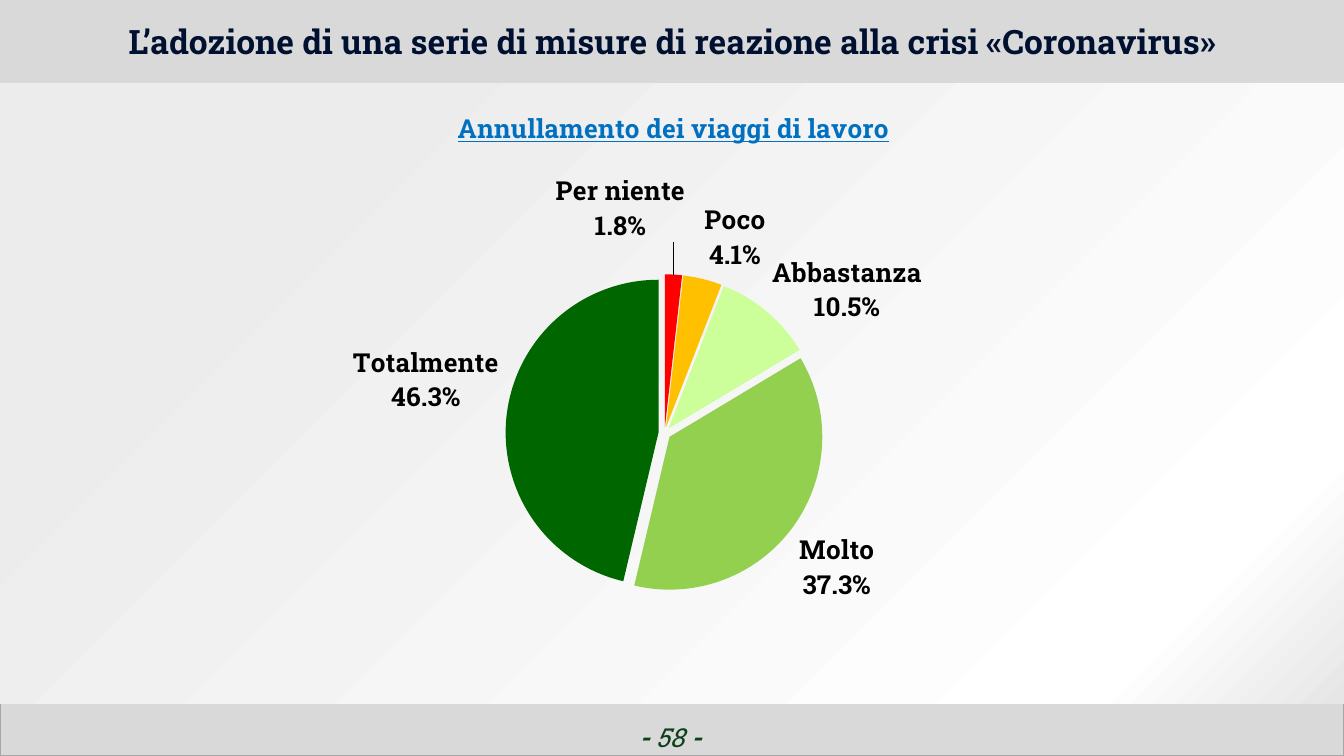
from lxml.etree import SubElement
from pptx import Presentation
from pptx.chart.data import CategoryChartData
from pptx.dml.color import RGBColor
from pptx.enum.chart import XL_CHART_TYPE, XL_LABEL_POSITION
from pptx.enum.shapes import MSO_SHAPE
from pptx.enum.text import MSO_ANCHOR, PP_ALIGN
from pptx.oxml import parse_xml
from pptx.oxml.ns import nsdecls, qn
from pptx.util import Inches, Pt

WIDTH = 10
HEIGHT = WIDTH * 9 / 16
HEADER, FOOTER = 0.63, 0.39
FONT = "Roboto Slab"
TOPIC = "Annullamento dei viaggi di lavoro"
# Category: share, slice colour
ANSWERS = {
    "Per niente": (0.018, "FF0000"),
    "Poco": (0.041, "FFC000"),
    "Abbastanza": (0.105, "CCFF99"),
    "Molto": (0.373, "93D050"),
    "Totalmente": (0.463, "006600"),
}
# Labels moved off their default place: point index, shift as share of the chart
LABEL_SHIFTS = {0: (-0.04, -0.04), 2: (0.0, 0.03)}


def colour(hex_value):
    return RGBColor.from_string(hex_value)


def inches(box):
    return [Inches(length) for length in box]


def style(font, size, hex_value, bold=True, italic=None):
    font.name, font.size = FONT, Pt(size)
    font.bold, font.italic = bold, italic
    font.color.rgb = colour(hex_value)


def add_band(page, box, fill, line=None):
    band = page.shapes.add_shape(MSO_SHAPE.RECTANGLE, *inches(box))
    band.shadow.inherit = False
    band.fill.solid()
    band.fill.fore_color.rgb = colour(fill)
    if line:
        band.line.color.rgb = colour(line)
        band.line.width = Pt(0.75)
    else:
        band.line.fill.background()
    return band


def add_backdrop(page, box):
    """Radial gradient that starts in the lower right corner."""
    backdrop = add_band(page, box, "FFFFFF")
    stops = "".join(
        f'<a:gs pos="{share * 1000}"><a:srgbClr val="{hex_value}"/></a:gs>'
        for share, hex_value in [(0, "E6E6E6"), (13, "FFFFFF"), (82, "ECECEC")]
    )
    gradient = parse_xml(
        f'<a:gradFill {nsdecls("a")} rotWithShape="1"><a:gsLst>{stops}</a:gsLst>'
        '<a:path path="circle"><a:fillToRect l="100000" t="100000"/></a:path></a:gradFill>'
    )
    properties = backdrop._element.spPr
    properties.replace(properties.find(qn("a:solidFill")), gradient)


def add_title(page, box, text):
    title = page.shapes.title
    title.left, title.top, title.width, title.height = inches(box)
    page.shapes._spTree.append(title._element)  # in front of the bands
    frame = title.text_frame
    frame.word_wrap = True
    frame.vertical_anchor = MSO_ANCHOR.MIDDLE
    para = frame.paragraphs[0]
    para.alignment, para.line_spacing = PP_ALIGN.CENTER, Pt(20)
    span = para.add_run()
    span.text = text
    style(span.font, 18, "001030")


def add_page_number(page, box, number):
    frame = page.shapes.add_textbox(*inches(box)).text_frame
    frame.word_wrap = True
    para = frame.paragraphs[0]
    para.alignment = PP_ALIGN.CENTER
    for text, bold in [("- ", True), (number, False), (" -", True)]:
        span = para.add_run()
        span.text = text
        style(span.font, 14, "0D411A", bold, italic=True)


def manual_layout(**settings):
    parts = "".join(f'<c:{name} val="{value}"/>' for name, value in settings.items())
    return parse_xml(
        f'<c:layout {nsdecls("c")}><c:manualLayout>{parts}</c:manualLayout></c:layout>'
    )


def set_layout(parent, position, layout):
    for old in parent.findall(qn("c:layout")):
        parent.remove(old)
    parent.insert(position, layout)


def show_value_and_category(element):
    """Category above value, on one label or on all labels of a series."""
    element.find(qn("c:showVal")).set("val", "1")
    element.find(qn("c:showCatName")).set("val", "1")
    for name in ("showSerName", "showPercent", "showLegendKey"):
        flag = element.find(qn(f"c:{name}"))
        if flag is not None:
            flag.set("val", "0")
    for old in element.findall(qn("c:showLeaderLines")):
        element.remove(old)
    SubElement(element, qn("c:separator")).text = "\n"


def add_labels(series):
    labels = series.data_labels
    labels.number_format, labels.number_format_is_linked = "0.0%", False
    labels.position = XL_LABEL_POSITION.OUTSIDE_END
    style(labels.font, 14, "000000")
    show_value_and_category(labels._element)
    SubElement(labels._element, qn("c:showLeaderLines")).set("val", "1")
    for index, (across, down) in LABEL_SHIFTS.items():
        label = series.points[index].data_label
        style(label.font, 14, "000000")
        label.position = XL_LABEL_POSITION.OUTSIDE_END
        element = label._get_or_add_dLbl()
        show_value_and_category(element)
        set_layout(element, 1, manual_layout(x=across, y=down))


def add_pie(page, box):
    data = CategoryChartData(number_format="0.0%")
    data.categories = list(ANSWERS)
    data.add_series(TOPIC, [share for share, _ in ANSWERS.values()])
    chart = page.shapes.add_chart(XL_CHART_TYPE.PIE, *inches(box), data).chart
    chart.has_legend = False
    chart.font.name, chart.font.size = "Calibri", Pt(10)
    chart.font.color.rgb = colour("000000")

    # Heading
    chart.has_title = True
    span = chart.chart_title.text_frame.paragraphs[0].add_run()
    span.text = TOPIC
    style(span.font, 14, "0070C0")
    span.font.underline = True
    heading = chart.chart_title._element
    set_layout(heading, 1, manual_layout(xMode="edge", yMode="edge", x=0.335, y=0.03))
    overlay = heading.find(qn("c:overlay"))
    if overlay is not None:
        overlay.set("val", "1")

    # Pie area and slices
    set_layout(chart._chartSpace.chart.plotArea, 0,
               manual_layout(layoutTarget="inner", xMode="edge", yMode="edge",
                             x=0.233, y=0.311, w=0.52, h=0.521))
    plot = chart.plots[0]
    plot.vary_by_categories = True
    series = plot.series[0]
    for index, (_, hex_value) in enumerate(ANSWERS.values()):
        fill = series.points[index].format.fill
        fill.solid()
        fill.fore_color.rgb = colour(hex_value)
    series._element.find(qn("c:dPt")).addprevious(
        parse_xml(f'<c:explosion {nsdecls("c")} val="4"/>'))
    add_labels(series)


def main():
    deck = Presentation()
    deck.slide_width, deck.slide_height = Inches(WIDTH), Inches(HEIGHT)
    page = deck.slides.add_slide(deck.slide_layouts[5])
    footer_top = HEIGHT - FOOTER

    add_band(page, (0, 0, WIDTH, HEADER), "D9D9D9")
    add_band(page, (0, footer_top, WIDTH, FOOTER), "D9D9D9", "A6A6A6")
    add_backdrop(page, (0, HEADER - 0.01, WIDTH, footer_top - HEADER + 0.01))
    add_page_number(page, (3.82, 5.32, 2.33, FOOTER), "58")
    add_title(page, (0.16, 0.02, 9.69, 0.59),
              "L’adozione di una serie di misure di reazione alla crisi «Coronavirus»")
    add_pie(page, (0.03, HEADER, 9.97, 4.54))
    deck.save("out.pptx")


if __name__ == "__main__":
    main()
